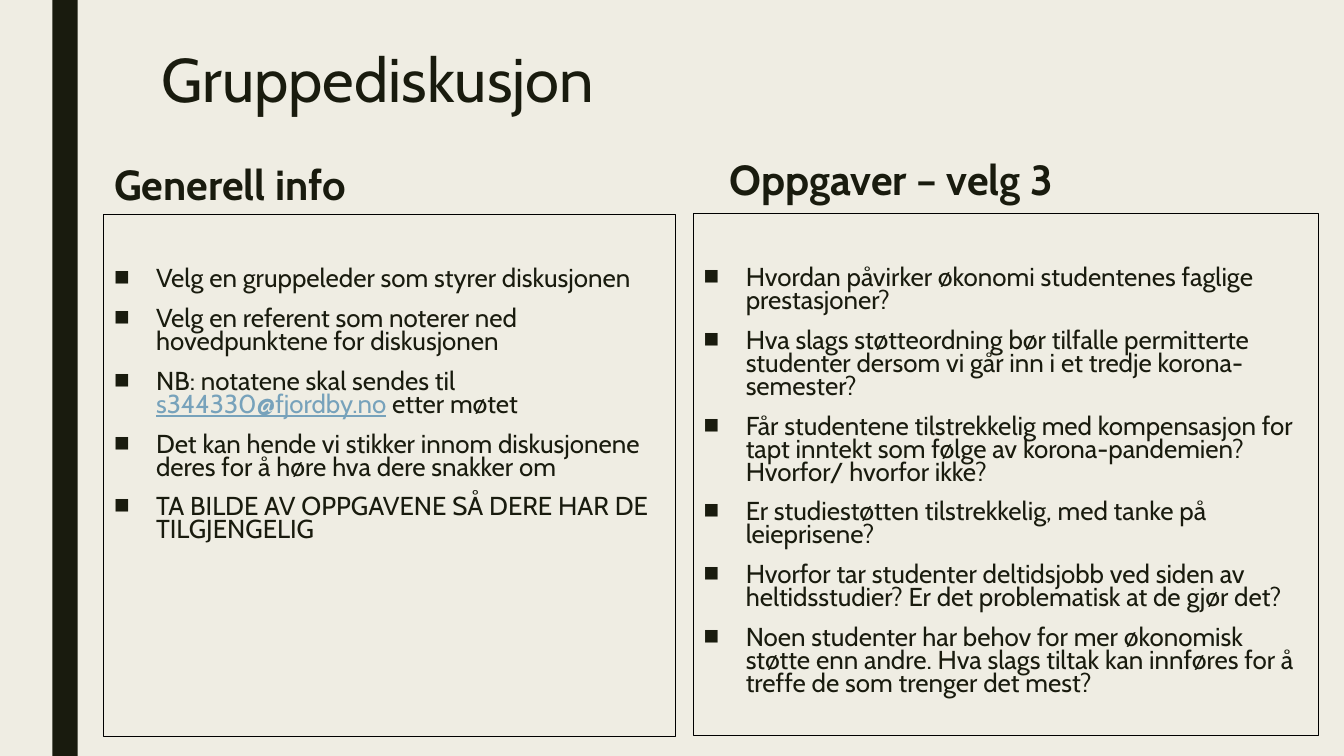
import lxml.etree
import pptx
import pptx.dml.color
import pptx.enum.shapes
import pptx.enum.text
import pptx.oxml.ns
import pptx.util

Cm, Pt = pptx.util.Cm, pptx.util.Pt
rgb = pptx.dml.color.RGBColor.from_string
ANCHOR = pptx.enum.text.MSO_ANCHOR
THEME = {
    "font": "Cabin", "paper": rgb("EFEDE3"), "ink": rgb("191B0E"),
    "link": rgb("77A2BB"), "border": rgb("000000"),
    "title": Pt(44), "heading": Pt(30), "body": Pt(18.5),
}
EMAIL = "s344330@fjordby.no"
COLUMNS = [
    ("Generell info", (2.62, 3.1, 12.34, 2.29), (2.62, 5.41, 14.4, 13.16), [
        "Velg en gruppeleder som styrer diskusjonen",
        "Velg en referent som noterer ned hovedpunktene for diskusjonen",
        f"NB: notatene skal sendes til {EMAIL} etter møtet",
        "Det kan hende vi stikker innom diskusjonene deres for å høre hva dere snakker om",
        "TA BILDE AV OPPGAVENE SÅ DERE HAR DE TILGJENGELIG",
    ]),
    ("Oppgaver – velg 3", (18.14, 2.97, 12.34, 2.29), (17.48, 5.38, 15.75, 13.16), [
        "Hvordan påvirker økonomi studentenes faglige prestasjoner?",
        "Hva slags støtteordning bør tilfalle permitterte studenter dersom vi går inn i et tredje korona-semester?",
        "Får studentene tilstrekkelig med kompensasjon for tapt inntekt som følge av korona-pandemien? Hvorfor/ hvorfor ikke?",
        "Er studiestøtten tilstrekkelig, med tanke på leieprisene?",
        "Hvorfor tar studenter deltidsjobb ved siden av heltidsstudier? Er det problematisk at de gjør det?",
        "Noen studenter har behov for mer økonomisk støtte enn andre. Hva slags tiltak kan innføres for å treffe de som trenger det mest?",
    ]),
]


def place(sp, box, anchor):
    sp.left, sp.top, sp.width, sp.height = map(Cm, box)
    tf = sp.text_frame
    tf.word_wrap = True
    tf.auto_size = pptx.enum.text.MSO_AUTO_SIZE.NONE
    tf.vertical_anchor = anchor
    return tf


def style(p, size, spacing, bold=False):
    p.alignment = pptx.enum.text.PP_ALIGN.LEFT
    p.line_spacing = spacing
    p.space_before = p.space_after = Pt(0)
    p.font.name = THEME["font"]
    p.font.size = THEME[size]
    p.font.bold = bold
    p.font.color.rgb = THEME["ink"]


prs = pptx.Presentation()
prs.slide_width, prs.slide_height = Cm(33.87), Cm(19.05)
s = prs.slides.add_slide(prs.slide_layouts.get_by_name("Comparison"))
s.background.fill.solid()
s.background.fill.fore_color.rgb = THEME["paper"]

bar = s.shapes.add_shape(pptx.enum.shapes.MSO_SHAPE.RECTANGLE, Cm(1.32), 0, Cm(0.64), prs.slide_height)
bar.shadow.inherit = False
bar.fill.solid()
bar.fill.fore_color.rgb = THEME["ink"]
bar.line.fill.background()

tf = place(s.shapes.title, (3.81, 1.12, 26.67, 4.11), ANCHOR.TOP)
tf.text = "Gruppediskusjon"
style(tf.paragraphs[0], "title", 0.89)

for i, (heading, heading_box, list_box, items) in enumerate(COLUMNS):
    tf = place(s.placeholders[1 + 2 * i], heading_box, ANCHOR.BOTTOM)
    tf.text = heading
    style(tf.paragraphs[0], "heading", 0.84, bold=True)

    sp = s.placeholders[2 + 2 * i]
    sp.line.color.rgb = THEME["border"]
    sp.line.width = Pt(0.75)
    tf = place(sp, list_box, ANCHOR.TOP)
    tf.margin_top = Cm(1.37)
    for n, item in enumerate(items):
        p = tf.add_paragraph() if n else tf.paragraphs[0]
        style(p, "body", 0.74)
        p.space_before, p.space_after = Pt(10 if n else 0), Pt(2)
        before, email, after = item.partition(EMAIL)
        p.add_run().text = before
        if email:
            r = p.add_run()
            r.text = email
            r.font.underline = True
            r.font.color.rgb = THEME["link"]
            p.add_run().text = after
        pPr = p._p.get_or_add_pPr()
        pPr.set("marL", str(Cm(1.06)))
        pPr.set("indent", str(-Cm(1.06)))
        bullet = lxml.etree.Element(pptx.oxml.ns.qn("a:buChar"), char="■")
        pPr.find(pptx.oxml.ns.qn("a:defRPr")).addprevious(bullet)

prs.save("out.pptx")
